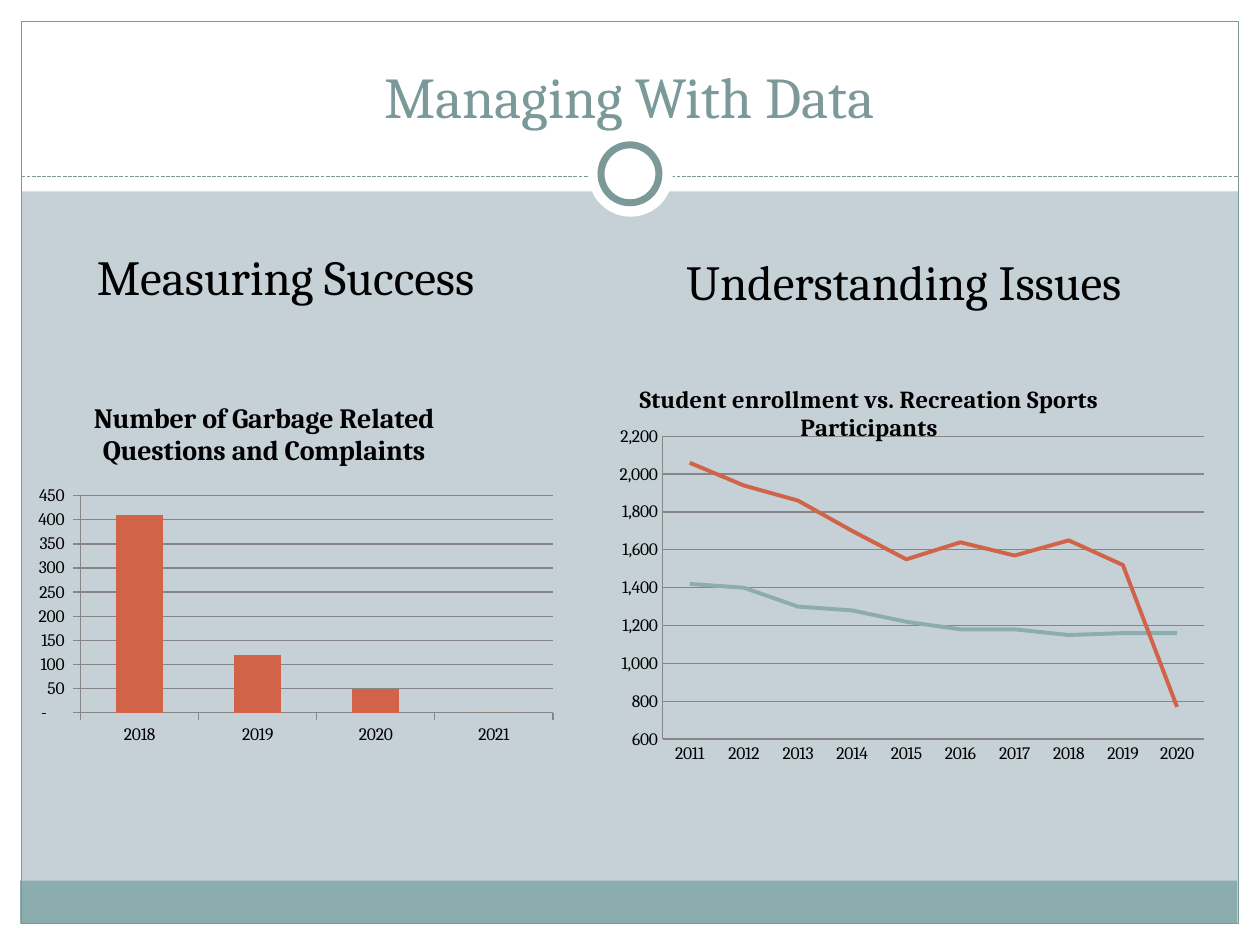
from lxml import etree
from pptx import Presentation
from pptx.chart.data import CategoryChartData
from pptx.dml.color import RGBColor
from pptx.enum.chart import XL_CHART_TYPE as CT, XL_TICK_MARK as TICK
from pptx.enum.dml import MSO_LINE
from pptx.enum.shapes import MSO_CONNECTOR, MSO_SHAPE as SHAPE
from pptx.enum.text import MSO_ANCHOR as ANCHOR, PP_ALIGN as ALIGN
from pptx.oxml.ns import qn
from pptx.util import Inches, Pt

COLORS = {"bg": "C5D1D7", "white": "FFFFFF", "teal": "8CADAE", "dark": "7C999A",
          "red": "D16349", "black": "000000", "grid": "868686"}
FONT = "Cambria"


class SlideBuilder:
    """Holds the style and the current slide, and adds elements to it."""

    def __init__(self, prs):
        self.s = prs.slides.add_slide(prs.slide_layouts[6])
        fill = self.s.background.fill
        fill.solid()
        fill.fore_color.rgb = self.rgb("bg")

    def rgb(self, name):
        return RGBColor.from_string(COLORS[name])

    def style(self, font, size, color="black", bold=False):
        font.name, font.size, font.bold = FONT, Pt(size), bold
        font.color.rgb = self.rgb(color)

    def stroke(self, line, color, width):
        line.color.rgb = self.rgb(color)
        line.width = Pt(width)

    def shape(self, kind, box, fill=None, line=None, width=0.75):
        sp = self.s.shapes.add_shape(kind, *map(Inches, box))
        sp.shadow.inherit = False
        if fill:
            sp.fill.solid()
            sp.fill.fore_color.rgb = self.rgb(fill)
        else:
            sp.fill.background()
        if line:
            self.stroke(sp.line, line, width)
        else:
            sp.line.fill.background()

    def dashed_line(self, x1, y1, x2, y2):
        cn = self.s.shapes.add_connector(MSO_CONNECTOR.STRAIGHT, *map(Inches, (x1, y1, x2, y2)))
        self.stroke(cn.line, "dark", 0.75)
        cn.line.dash_style = MSO_LINE.SQUARE_DOT
        etree.SubElement(cn._element.spPr, qn("a:effectLst"))

    def text(self, box, text, size, color="black", align=ALIGN.LEFT, anchor=ANCHOR.TOP, indent=0):
        tf = self.s.shapes.add_textbox(*map(Inches, box)).text_frame
        tf.word_wrap = True
        tf.vertical_anchor = anchor
        p = tf.paragraphs[0]
        p.alignment = align
        p._p.get_or_add_pPr().set("marL", str(Inches(indent)))
        r = p.add_run()
        r.text = text
        self.style(r.font, size, color)

    def layout(self, parent, index, **values):
        for old in parent.findall(qn("c:layout")):
            parent.remove(old)
        layout = etree.Element(qn("c:layout"))
        manual = etree.SubElement(layout, qn("c:manualLayout"))
        if "w" in values:
            etree.SubElement(manual, qn("c:layoutTarget")).set("val", "inner")
        for tag in ("xMode", "yMode"):
            etree.SubElement(manual, qn(f"c:{tag}")).set("val", "edge")
        for tag, value in values.items():
            etree.SubElement(manual, qn(f"c:{tag}")).set("val", str(value))
        parent.insert(index, layout)

    def chart(self, kind, box, title, title_size, title_at, plot, cats, series, scale, fmt, tick):
        data = CategoryChartData()
        data.categories = cats
        for name, values, _ in series:
            data.add_series(name, values)
        ch = self.s.shapes.add_chart(kind, *map(Inches, box), data).chart
        self.style(ch.font, 10)
        ch.has_legend = False
        ch.has_title = True
        r = ch.chart_title.text_frame.paragraphs[0].add_run()
        r.text = title
        self.style(r.font, title_size, bold=True)
        self.layout(ch.chart_title._element, 1, **dict(zip("xy", title_at)))
        self.layout(ch._chartSpace.chart.plotArea, 0, **dict(zip("xywh", plot)))

        va = ch.value_axis
        va.minimum_scale, va.maximum_scale, va.major_unit = scale
        va.tick_labels.number_format = fmt
        va.tick_labels.number_format_is_linked = False
        self.stroke(va.major_gridlines.format.line, "grid", 0.75)
        for axis in (va, ch.category_axis):
            axis.major_tick_mark = tick
            axis.minor_tick_mark = TICK.NONE
            self.stroke(axis.format.line, "grid", 0.75)

        ch.plots[0].vary_by_categories = False
        for ser, (_, _, color) in zip(ch.plots[0].series, series):
            if kind == CT.LINE:
                ser.smooth = False
                self.stroke(ser.format.line, color, 2.25)
            else:
                ch.plots[0].gap_width = 150
                ser.format.fill.solid()
                ser.format.fill.fore_color.rgb = self.rgb(color)


def main():
    prs = Presentation()
    prs.slide_width, prs.slide_height = Inches(10), Inches(7.5)
    b = SlideBuilder(prs)

    for box in ((0, 7.33, 10, 0.17), (0, 0, 10, 1.52), (0, 0, 0.17, 7.5), (9.83, 0, 0.17, 7.5)):
        b.shape(SHAPE.RECTANGLE, box, "white")
    b.shape(SHAPE.RECTANGLE, (0.16, 6.99, 9.66, 0.34), "teal")
    b.shape(SHAPE.RECTANGLE, (0.17, 0.17, 9.66, 7.16), line="dark")
    b.dashed_line(0.17, 1.4, 9.83, 1.4)
    b.shape(SHAPE.OVAL, (4.67, 1.05, 0.67, 0.67), "white")
    b.shape(SHAPE.OVAL, (4.77, 1.15, 0.46, 0.46), "white", "dark", 4)

    b.text((0.33, 0.25, 9.33, 0.83), "Managing With Data", 33, "dark", ALIGN.CENTER, ANCHOR.BOTTOM)
    b.text((0.33, 1.91, 9.3, 5), "Measuring Success", 28, indent=0.34)

    complaints = "Number of Garbage Related Questions and Complaints"
    b.chart(CT.COLUMN_CLUSTERED, (0.19, 3.05, 4.28, 2.92), complaints, 16, (0.12, 0.03),
            (0.105, 0.303, 0.876, 0.59), [str(y) for y in range(2018, 2022)],
            [(complaints, (410, 120, 50, 0), "red")], (0, 450, 50),
            '_(* #,##0_);_(* \\(#,##0\\);_(* "-"??_);_(@_)', TICK.OUTSIDE)
    b.chart(CT.LINE, (4.33, 2.83, 5.92, 4.34),
            "Student enrollment vs. Recreation Sports Participants", 14, (0.12, 0.04),
            (0.157, 0.146, 0.726, 0.554), [str(y) for y in range(2011, 2021)],
            [("Series 1", (1420, 1400, 1300, 1280, 1220, 1180, 1180, 1150, 1160, 1160), "teal"),
             ("Series 2", (2060, 1940, 1860, 1700, 1550, 1640, 1570, 1650, 1520, 770), "red")],
            (600, 2200, 200), "#,##0", TICK.NONE)

    b.text((5.29, 1.95, 4.17, 0.88), "Understanding Issues", 28, indent=0.06)
    prs.save("out.pptx")


if __name__ == "__main__":
    main()
